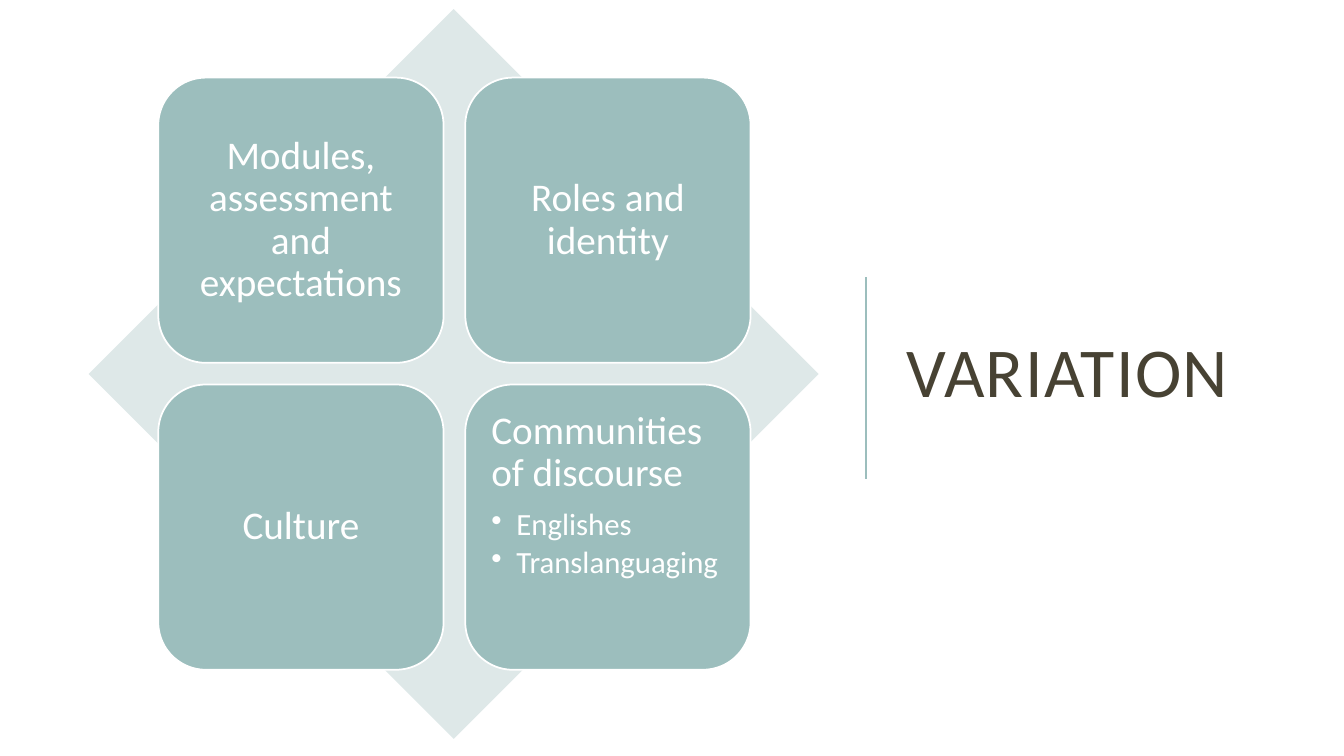
from pptx import Presentation
from pptx.dml.color import RGBColor
from pptx.enum.shapes import MSO_CONNECTOR, MSO_SHAPE
from pptx.enum.text import MSO_ANCHOR, PP_ALIGN
from pptx.oxml.ns import qn
from pptx.util import Inches, Pt
from lxml.etree import SubElement

TEAL = RGBColor(0x9C, 0xBE, 0xBD)
PALE_TEAL = RGBColor(0xDE, 0xE8, 0xE8)
WHITE = RGBColor(0xFF, 0xFF, 0xFF)
BROWN = RGBColor(0x47, 0x42, 0x33)

prs = Presentation()
prs.slide_width, prs.slide_height = Inches(13.33), Inches(7.5)
slide = prs.slides.add_slide(prs.slide_layouts[6])


def add_filled(preset, left, top, size, color):
    shape = slide.shapes.add_shape(
        preset, Inches(left), Inches(top), Inches(size), Inches(size))
    shape.shadow.inherit = False
    shape.fill.solid()
    shape.fill.fore_color.rgb = color
    return shape


def write(paragraph, text, size, color, **layout):
    for attribute, value in layout.items():
        setattr(paragraph, attribute, value)
    run = paragraph.add_run()
    run.text = text
    run.font.name, run.font.size = "Calibri", Pt(size)
    run.font.color.rgb = color
    return run


# Title
title = slide.shapes.add_textbox(
    Inches(8.89), Inches(0.7), Inches(3.8), Inches(6.09)).text_frame
title.word_wrap = True
title.vertical_anchor = MSO_ANCHOR.MIDDLE
heading = write(title.paragraphs[0], "VARIATION", 50, BROWN, line_spacing=0.8)
heading.font._element.set("spc", "100")

# Divider beside the title
divider = slide.shapes.add_connector(
    MSO_CONNECTOR.STRAIGHT, Inches(8.59), Inches(4.75), Inches(8.59), Inches(2.75))
divider.line.color.rgb = TEAL
divider.line.width = Pt(1.5)
SubElement(divider._element.spPr, qn("a:effectLst"))

# Diamond behind the four themes
diamond = add_filled(MSO_SHAPE.DIAMOND, 0.88, 0.09, 7.24, PALE_TEAL)
diamond.line.fill.background()

# Two-by-two grid of themes, each with its subtopics
themes = [
    ("Modules, assessment and expectations", []),
    ("Roles and identity", []),
    ("Culture", []),
    ("Communities of discourse", ["Englishes", "Translanguaging"]),
]
GRID_LEFT, GRID_TOP, TILE, PITCH = 1.57, 0.77, 2.83, 3.045

for index, (theme, subtopics) in enumerate(themes):
    row, column = divmod(index, 2)
    tile = add_filled(MSO_SHAPE.ROUNDED_RECTANGLE, GRID_LEFT + column * PITCH,
                      GRID_TOP + row * PITCH, TILE, TEAL)
    tile.line.color.rgb = WHITE
    tile.line.width = Pt(1.25)

    frame = tile.text_frame
    frame_format = {
        "word_wrap": True,
        "vertical_anchor": MSO_ANCHOR.TOP if subtopics else MSO_ANCHOR.MIDDLE,
        **{f"margin_{side}": Inches(0.12)
           for side in ("left", "top", "right", "bottom")},
    }
    for attribute, value in frame_format.items():
        setattr(frame, attribute, value)

    write(frame.paragraphs[0], theme, 28, WHITE, line_spacing=0.9,
          space_after=Pt(10),
          alignment=PP_ALIGN.LEFT if subtopics else PP_ALIGN.CENTER)

    for subtopic in subtopics:
        bullet = frame.add_paragraph()
        write(bullet, subtopic, 22, WHITE, level=1, line_spacing=0.9,
              space_after=Pt(3.3), alignment=PP_ALIGN.LEFT)
        properties = bullet._p.get_or_add_pPr()
        properties.set("marL", str(Inches(0.25)))
        properties.set("indent", str(Inches(-0.25)))
        SubElement(properties, qn("a:buChar")).set("char", "•")

prs.save("out.pptx")
